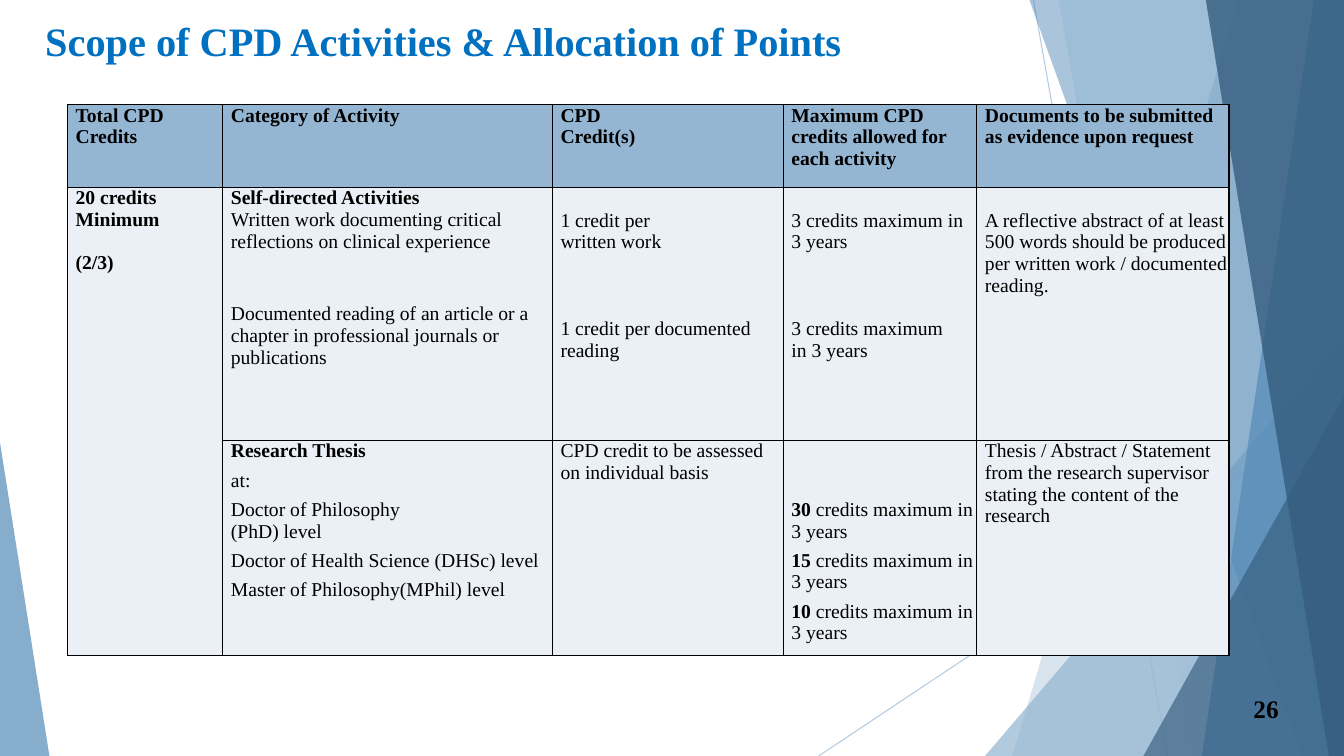
import pptx
import pptx.util
import pptx.dml.color
import pptx.enum.shapes
import pptx.enum.text
import pptx.oxml
import pptx.oxml.ns

Inches = pptx.util.Inches
Pt = pptx.util.Pt
qn = pptx.oxml.ns.qn


def paint(fill, color, opacity=100):
    fill.solid()
    fill.fore_color.rgb = pptx.dml.color.RGBColor.from_string(color)
    if opacity < 100:
        clr = fill._xPr.find(".//" + qn("a:srgbClr"))
        clr.append(pptx.oxml.parse_xml(
            f'<a:alpha {pptx.oxml.ns.nsdecls("a")} val="{opacity * 1000}"/>'))


def add_run(p, text, size, color, bold):
    r = p.add_run()
    r.text = text
    r.font.name = "Times New Roman"
    r.font.size = Pt(size)
    r.font.bold = bold
    paint(r.font.fill, color)


prs = pptx.Presentation()
prs.slide_width = Inches(13.33)
prs.slide_height = Inches(7.5)
s = prs.slides.add_slide(prs.slide_layouts[6])

for x1, y1, x2, y2 in [(10.25, 0, 11.58, 7.5), (13.33, 4.03, 8.12, 7.5)]:
    c = s.shapes.add_connector(pptx.enum.shapes.MSO_CONNECTOR.STRAIGHT,
                               Inches(x1), Inches(y1), Inches(x2), Inches(y2))
    c.line.width = Pt(0.75)
    paint(c.line.fill, "94B6D2", 70)
    c._element.spPr.append(pptx.oxml.parse_xml(
        f'<a:effectLst {pptx.oxml.ns.nsdecls("a")}/>'))

bands = [
    ("free", (12.28, 10.04), "94B6D2", 36),
    ("free", (10.5, 11.83), "94B6D2", 20),
    ("triangle", (9.77, 3.33, 3.56, 4.17, 1), "94B6D2", 72),
    ("free", (10.21, 12.91), "558BB8", 50),
    ("free", (13.03, 11.92), "558BB8", 70),
    ("free", (11.96, 13.18), "355D7E", 80),
    ("triangle", (11.34, 3.93, 1.99, 3.57, 1), "355D7E", 66),
    ("triangle", (0, 4.39, 0.49, 3.11, 0), "558BB8", 70),
]
for kind, place, color, opacity in bands:
    if kind == "free":
        top_x, bottom_x = place
        fb = s.shapes.build_freeform(Inches(top_x), 0)
        fb.add_line_segments([(Inches(x), Inches(y)) for x, y in
                              [(13.33, 0), (13.33, 7.5), (bottom_x, 7.5)]])
        sp = fb.convert_to_shape()
    else:
        sp = s.shapes.add_shape(pptx.enum.shapes.MSO_SHAPE.ISOSCELES_TRIANGLE,
                                *[Inches(v) for v in place[:4]])
        sp.adjustments[0] = place[4]
    sp.shadow.inherit = False
    sp.line.fill.background()
    paint(sp.fill, color, opacity)

left, right = pptx.enum.text.PP_ALIGN.LEFT, pptx.enum.text.PP_ALIGN.RIGHT
top, middle = pptx.enum.text.MSO_ANCHOR.TOP, pptx.enum.text.MSO_ANCHOR.MIDDLE
for box, text, size, color, align, anchor in [
    ((0.35, 0.11, 12.78, 0.56), "Scope of CPD Activities & Allocation of Points",
     28.8, "0070C0", left, top),
    ((12.03, 6.83, 0.75, 0.4), "26", 18, "000000", right, middle),
]:
    tf = s.shapes.add_textbox(*[Inches(v) for v in box]).text_frame
    tf.word_wrap = True
    tf.vertical_anchor = anchor
    tf.paragraphs[0].alignment = align
    add_run(tf.paragraphs[0], text, size, color, True)

widths = [1.54, 3.27, 2.29, 1.92, 2.5]
heights = [0.82, 2.51, 2.02]
table = s.shapes.add_table(3, 5, Inches(0.67), Inches(1.04),
                           Inches(sum(widths)), Inches(sum(heights))).table
table.first_row = False
table.horz_banding = False
for col, width in zip(table.columns, widths):
    col.width = Inches(width)
for row, height in zip(table.rows, heights):
    row.height = Inches(height)

# (top margin, [(space before, bold text, plain text)])
contents = [
    [
        (0, [(0, "Total CPD", ""), (0, "Credits", "")]),
        (0, [(0, "Category of Activity", "")]),
        (0, [(0, "CPD", ""), (0, "Credit(s)", "")]),
        (0, [(0, "Maximum CPD credits allowed for each activity", "")]),
        (0, [(0, "Documents to be submitted as evidence upon request", "")]),
    ],
    [
        (0, [(0, "20 credits", ""), (0, "Minimum", ""), (15.5, "(2/3)", "")]),
        (0, [(0, "Self-directed Activities", ""),
             (0, "", "Written work documenting critical reflections on clinical experience"),
             (36.4, "", "Documented reading of an article or a chapter in "
                        "professional journals or publications")]),
        (0.22, [(0, "", "1 credit per"), (0, "", "written work"),
                (46.7, "", "1 credit per documented"), (0, "", "reading")]),
        (0.22, [(0, "", "3 credits maximum in 3 years"),
                (46.7, "", "3 credits maximum"), (0, "", "in 3 years")]),
        (0.22, [(0, "", "A reflective abstract of at least 500 words should be "
                        "produced per written work / documented reading.")]),
    ],
    [
        (0, []),
        (0, [(0, "Research Thesis", ""), (5.4, "", "at:"),
             (5.4, "", "Doctor of Philosophy"), (0, "", "(PhD) level"),
             (5.4, "", "Doctor of Health Science (DHSc) level"),
             (5.4, "", "Master of Philosophy(MPhil) level")]),
        (0, [(0, "", "CPD credit to be assessed on individual basis")]),
        (0.58, [(before, credits, " credits maximum in 3 years")
                for before, credits in [(0, "30"), (5.4, "15"), (5.4, "10")]]),
        (0, [(0, "", "Thesis / Abstract / Statement from the research supervisor "
                     "stating the content of the research")]),
    ],
]
for i, row in enumerate(contents):
    for j, (margin_top, paragraphs) in enumerate(row):
        cell = table.cell(i, j)
        cell.margin_left = Inches(0.08)
        cell.margin_right = cell.margin_bottom = 0
        cell.margin_top = Inches(margin_top)
        tcPr = cell._tc.get_or_add_tcPr()
        for side in ["lnL", "lnR", "lnT", "lnB"]:
            tcPr.append(pptx.oxml.parse_xml(
                f'<a:{side} {pptx.oxml.ns.nsdecls("a")} w="12700"><a:solidFill>'
                f'<a:srgbClr val="000000"/></a:solidFill></a:{side}>'))
        paint(cell.fill, "94B6D2" if i == 0 else "EAF0F6")
        tf = cell.text_frame
        for k, (before, bold_text, plain_text) in enumerate(paragraphs):
            p = tf.add_paragraph() if k else tf.paragraphs[0]
            p.space_before = Pt(before)
            for text, bold in [(bold_text, True), (plain_text, False)]:
                if text:
                    add_run(p, text, 14, "000000", bold)
table.cell(1, 0).merge(table.cell(2, 0))

prs.save("out.pptx")
